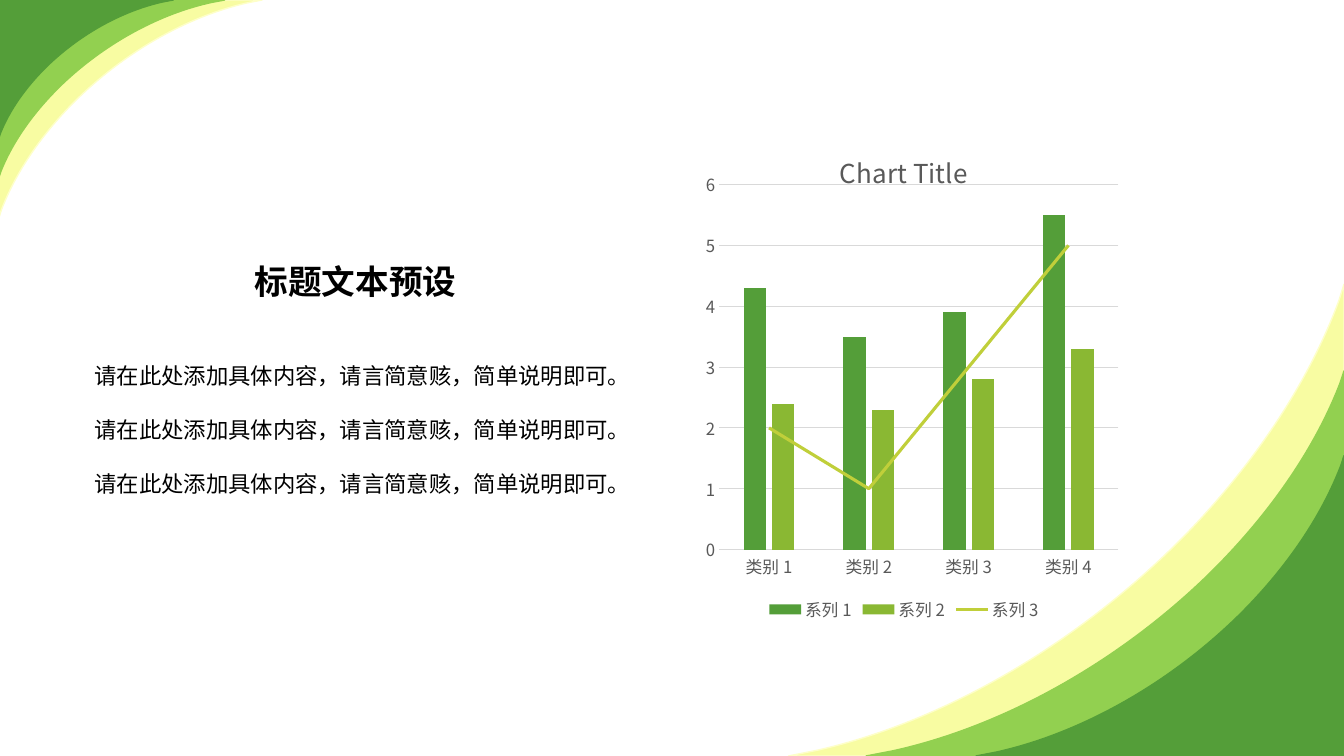
from dataclasses import dataclass

from lxml import etree
from pptx import Presentation
from pptx.chart.chart import Chart
from pptx.chart.data import CategoryChartData
from pptx.dml.color import RGBColor
from pptx.enum.chart import XL_CHART_TYPE, XL_LEGEND_POSITION, XL_MARKER_STYLE, XL_TICK_MARK
from pptx.enum.text import MSO_ANCHOR, MSO_AUTO_SIZE, PP_ALIGN
from pptx.oxml import parse_xml
from pptx.oxml.ns import nsdecls, qn
from pptx.shapes.autoshape import Shape
from pptx.shapes.placeholder import SlidePlaceholder
from pptx.slide import Slide
from pptx.text.text import Font
from pptx.util import Inches, Pt

WIDTH, HEIGHT = Inches(40 / 3), Inches(7.5)
COLUMN, ROW = WIDTH / 100, HEIGHT / 100
FACE = "Noto Sans CJK SC"

BLACK = RGBColor(0x00, 0x00, 0x00)
GREY = RGBColor(0x59, 0x59, 0x59)
SILVER = RGBColor(0xD9, 0xD9, 0xD9)
GREEN = RGBColor(0x54, 0x9E, 0x39)
OLIVE = RGBColor(0x8A, 0xB8, 0x33)
LIME = RGBColor(0xC0, 0xCF, 0x3A)
LEAF = RGBColor(0x92, 0xD0, 0x50)
CREAM = RGBColor(0xF8, 0xFC, 0xA2)
PALE = RGBColor(0xFE, 0xFF, 0xC9)

CLUSTER = XL_CHART_TYPE.COLUMN_CLUSTERED
BOTTOM = XL_LEGEND_POSITION.BOTTOM
BARE = XL_MARKER_STYLE.NONE
NO_TICK = XL_TICK_MARK.NONE
MIDDLE = MSO_ANCHOR.MIDDLE
FIXED = MSO_AUTO_SIZE.NONE
LEFT, CENTER = PP_ALIGN.LEFT, PP_ALIGN.CENTER


@dataclass
class Box:
    left: float
    top: float
    width: float
    height: float

    def place(self) -> tuple[int, int, int, int]:
        return (round(self.left * COLUMN), round(self.top * ROW),
                round(self.width * COLUMN), round(self.height * ROW))


@dataclass
class Band:
    width: float
    height: float
    fill: RGBColor
    edge: RGBColor
    lower: bool


@dataclass
class Series:
    name: str
    values: tuple[float, ...]
    color: RGBColor


@dataclass
class Copy:
    box: Box
    text: str
    size: int
    bold: bool
    align: PP_ALIGN
    spacing: float
    wrap: bool


BANDS = [
    Band(41.33, 62.4, CREAM, PALE, True),
    Band(35.56, 50.93, LEAF, LEAF, True),
    Band(27.38, 39.73, GREEN, GREEN, True),
    Band(19.58, 28.8, CREAM, PALE, False),
    Band(16.8, 23.47, LEAF, LEAF, False),
    Band(12.98, 18.27, GREEN, GREEN, False),
]
BLEED = 0.08
OUTLINE = [
    (100, 0), (94.5, 1.3),
    (72.4, 7.3), (48.1, 23.3), (28.3, 47.2),
    (15.2, 63.2), (6, 80.3), (0.9, 96.6),
    (0, 100), (0, 0),
]
BENDS = (1, 4)

GROUPS = [f"类别 {n}" for n in range(1, 5)]
SERIES = [
    Series("系列 1", (4.3, 3.5, 3.9, 5.5), GREEN),
    Series("系列 2", (2.4, 2.3, 2.8, 3.3), OLIVE),
    Series("系列 3", (2, 1, 3, 5), LIME),
]
CHART = Box(51.3, 17.2, 31.95, 65.6)
PLOT = {"x": 6.9, "y": 11, "w": 93.1, "h": 73.6}

TITLE = Copy(Box(2.9, 30, 47.1, 11.6), "标题文本预设", 24, True, CENTER, 1.5, False)
BODY = Copy(Box(7.03, 33.6, 40.35, 42.93),
            "\n".join(["请在此处添加具体内容，请言简意赅，简单说明即可。"] * 3),
            16, False, LEFT, 2.0, True)


def style(font: Font, size: float, color: RGBColor, bold: bool = False) -> None:
    font.size, font.bold, font.name = Pt(size), bold, FACE
    font.color.rgb = color
    etree.SubElement(font._rPr, qn("a:ea"), typeface=FACE)


def bend(shape: Shape) -> None:
    lines = list(shape._element.iter(qn("a:lnTo")))
    for start in BENDS:
        trio = lines[start:start + 3]
        curve = etree.Element(qn("a:cubicBezTo"))
        trio[0].addprevious(curve)
        for line in trio:
            curve.append(line[0])
            line.getparent().remove(line)


def draw_band(slide: Slide, band: Band) -> None:
    points = []
    for x, y in OUTLINE:
        across, down = x / 100 * band.width * COLUMN, y / 100 * band.height * ROW
        points.append((WIDTH - across, HEIGHT - down) if band.lower
                      else (across - BLEED * COLUMN, down))
    pen = slide.shapes.build_freeform(*points[0], scale=1.0)
    pen.add_line_segments(points[1:], close=True)
    shape = pen.convert_to_shape()
    bend(shape)
    shape.shadow.inherit = False
    shape.fill.solid()
    shape.fill.fore_color.rgb = band.fill
    shape.line.color.rgb = band.edge
    shape.line.width = Pt(1)


def lay_plot(chart: Chart) -> None:
    area = chart._chartSpace.chart.plotArea
    for old in area.findall(qn("c:layout")):
        area.remove(old)
    sizes = "".join(f'<c:{key} val="{share / 100}"/>' for key, share in PLOT.items())
    area.insert(0, parse_xml(
        f'<c:layout {nsdecls("c")}><c:manualLayout><c:layoutTarget val="inner"/>'
        f'<c:xMode val="edge"/><c:yMode val="edge"/>{sizes}</c:manualLayout></c:layout>'))


def split_line(chart: Chart) -> None:
    bars = chart._chartSpace.chart.plotArea.find(qn("c:barChart"))
    last = bars.findall(qn("c:ser"))[-1]
    for flag in last.findall(qn("c:invertIfNegative")):
        last.remove(flag)
    lines = parse_xml(f'<c:lineChart {nsdecls("c")}><c:grouping val="standard"/>'
                      '<c:varyColors val="0"/></c:lineChart>')
    lines.append(last)
    etree.SubElement(lines, qn("c:marker"), val="1")
    for axis in bars.findall(qn("c:axId")):
        etree.SubElement(lines, qn("c:axId"), val=axis.get("val"))
    bars.addnext(lines)


def draw_chart(slide: Slide) -> None:
    data = CategoryChartData()
    data.categories = GROUPS
    for item in SERIES:
        data.add_series(item.name, item.values)
    chart = slide.shapes.add_chart(CLUSTER, *CHART.place(), data).chart
    style(chart.font, 10, BLACK)
    chart.has_title = True
    chart.chart_title.text_frame.text = "Chart Title"
    style(chart.chart_title.text_frame.paragraphs[0].runs[0].font, 18.6, GREY)
    chart.has_legend = True
    chart.legend.position = BOTTOM
    chart.legend.include_in_layout = False
    style(chart.legend.font, 12, GREY)
    groups, scale = chart.category_axis, chart.value_axis
    for axis in (groups, scale):
        axis.major_tick_mark = axis.minor_tick_mark = NO_TICK
        style(axis.tick_labels.font, 12, GREY)
    scale.minimum_scale, scale.maximum_scale, scale.major_unit = 0, 6, 1
    scale.format.line.fill.background()
    for line in (groups.format.line, scale.major_gridlines.format.line):
        line.color.rgb, line.width = SILVER, Pt(0.75)
    lay_plot(chart)
    split_line(chart)
    bars, lines = chart.plots
    bars.gap_width, bars.overlap, bars.vary_by_categories = 219, -27, False
    for column, item in zip(bars.series, SERIES):
        column.format.fill.solid()
        column.format.fill.fore_color.rgb = item.color
    trace = lines.series[0]
    trace.smooth = False
    trace.marker.style = BARE
    trace.format.line.color.rgb = SERIES[-1].color
    trace.format.line.width = Pt(2.25)


def fill_copy(holder: SlidePlaceholder, copy: Copy) -> None:
    holder.left, holder.top, holder.width, holder.height = copy.box.place()
    frame = holder.text_frame
    frame.text = copy.text
    frame.auto_size, frame.word_wrap, frame.vertical_anchor = FIXED, copy.wrap, MIDDLE
    frame.margin_left = frame.margin_right = frame.margin_top = frame.margin_bottom = 0
    for line in frame.paragraphs:
        props = line._p.get_or_add_pPr()
        props.set("marL", "0")
        props.set("indent", "0")
        etree.SubElement(props, qn("a:buNone"))
        line.alignment, line.line_spacing = copy.align, copy.spacing
        line.space_before = Pt(0)
        style(line.runs[0].font, copy.size, BLACK, copy.bold)


def main() -> None:
    deck = Presentation()
    deck.slide_width, deck.slide_height = WIDTH, HEIGHT
    slide = deck.slides.add_slide(deck.slide_layouts[1])
    draw_chart(slide)
    for band in BANDS:
        draw_band(slide, band)
    fill_copy(slide.shapes.title, TITLE)
    fill_copy(slide.placeholders[1], BODY)
    deck.save("out.pptx")


if __name__ == "__main__":
    main()
